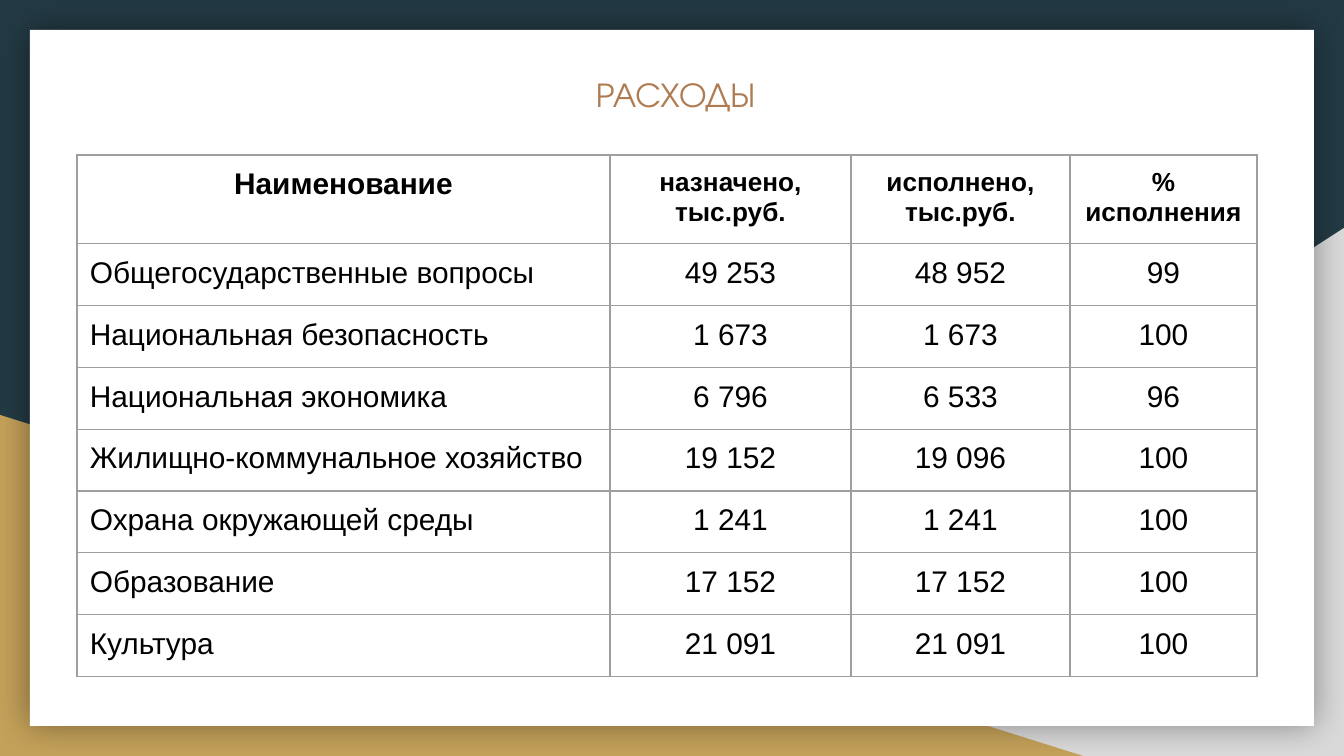
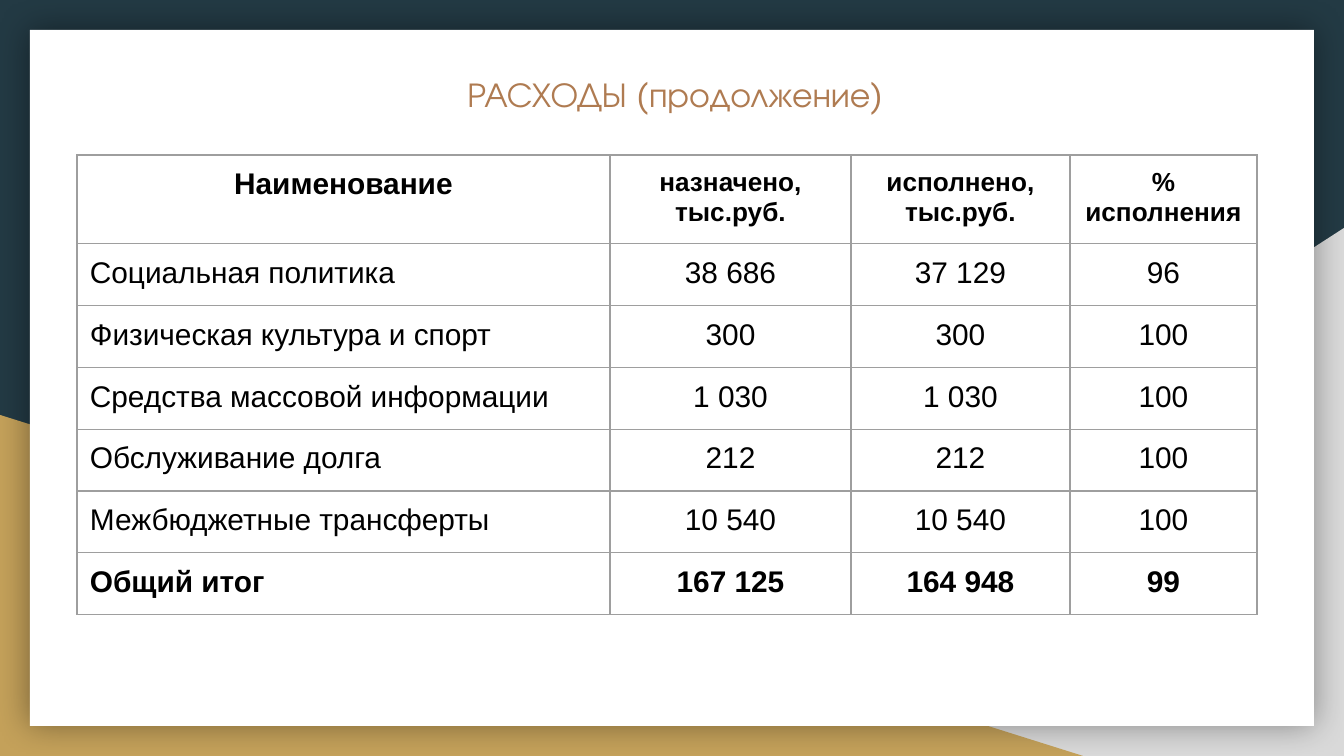
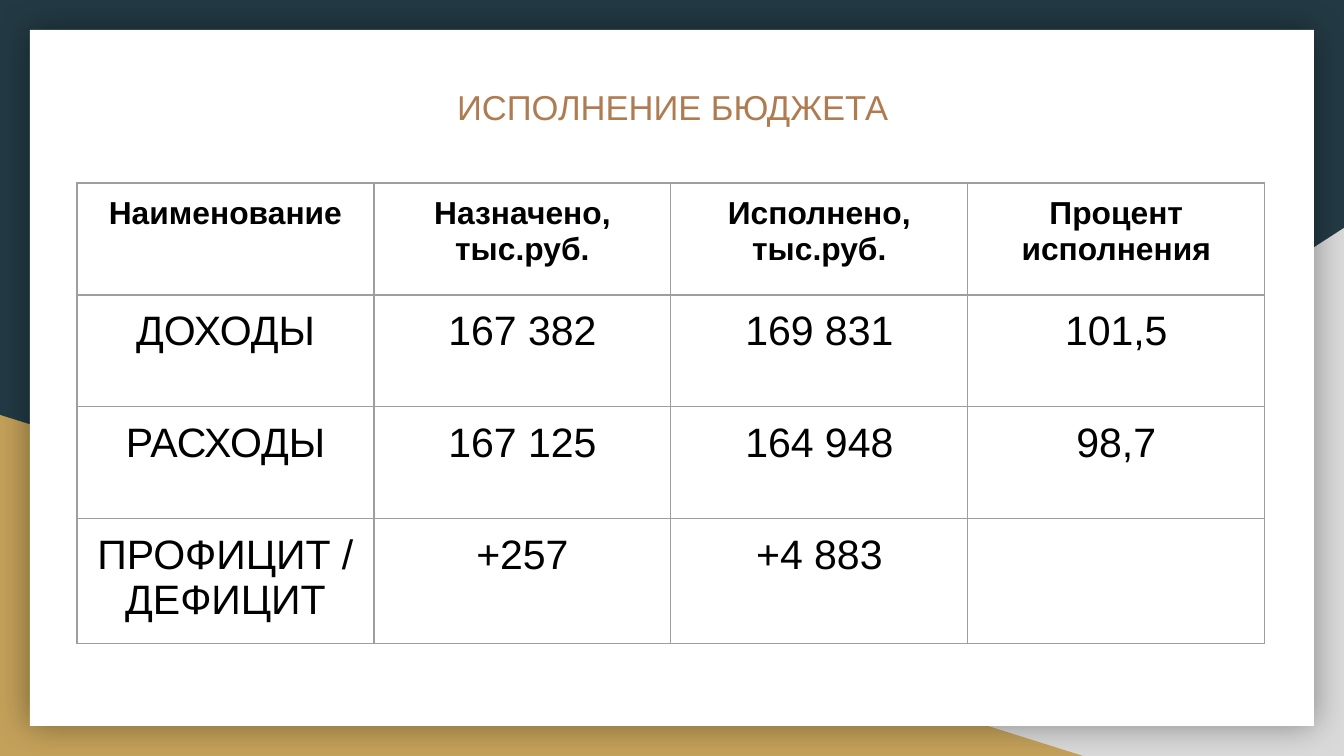
"""Build three budget slides: expenses in two parts and the budget summary."""

from dataclasses import dataclass
from typing import NamedTuple

from pptx import Presentation
from pptx.dml.color import RGBColor
from pptx.enum.shapes import MSO_SHAPE as Preset
from pptx.enum.text import MSO_ANCHOR as Anchor, PP_ALIGN as Align
from pptx.oxml import parse_xml
from pptx.oxml.ns import nsdecls
from pptx.slide import Slide
from pptx.table import _Cell as Cell
from pptx.text.text import _Paragraph as Paragraph
from pptx.util import Emu, Pt

EMU_PER_PX = 914400 / 134.4


@dataclass(frozen=True)
class Theme:
    """Colours, fonts and sizes shared by the slides."""

    navy: str = "233A44"
    silver: str = "D9D9D9"
    gold: str = "C4A15A"
    paper: str = "FFFFFF"
    shadow: str = "000000"
    title: str = "AF7B51"
    ink: str = "000000"
    grid: str = "9E9E9E"
    grid_width: float = 0.75
    body_font: str = "Arial"
    display_font: str = "TeX Gyre Adventor"
    display_size: float = 18.6
    summary_title_size: float = 18.5
    name_size: float = 16
    heading_size: float = 14
    summary_heading_size: float = 17
    summary_size: float = 22


THEME = Theme()


class Box(NamedTuple):
    """A rectangle in px."""

    left: int
    top: int
    width: int
    height: int


class Backdrop(NamedTuple):
    """One filled shape behind the content."""

    preset: Preset
    box: Box
    color: str
    flipped: bool = False
    shadowed: bool = False


class Title(NamedTuple):
    """A slide title with its place and type."""

    text: str
    box: Box
    font: str
    size: float


class TableStyle(NamedTuple):
    """Place, grid and type sizes of one kind of table."""

    left: int
    top: int
    columns: tuple[int, ...]
    heading_height: int
    row_height: int
    heading_sizes: tuple[float, ...]
    body_size: float
    name_align: Align


class Page(NamedTuple):
    """The content of one slide."""

    title: Title
    style: TableStyle
    headings: tuple[str, ...]
    rows: tuple[tuple[str, ...], ...]
    has_total: bool = False


SLIDE = Box(0, 0, 1344, 756)
INSET = 13
SHADOW_BLUR = 34
SHADOW_OPACITY = 40

BACKDROPS = (
    Backdrop(Preset.RIGHT_TRIANGLE, Box(527, 228, 817, 528), THEME.silver, flipped=True),
    Backdrop(Preset.RIGHT_TRIANGLE, Box(0, 415, 1083, 341), THEME.gold),
    Backdrop(Preset.RECTANGLE, Box(30, 30, 1284, 696), THEME.paper, shadowed=True),
)

EXPENSE_TITLE_BOX = Box(121, 60, 1109, 94)
EXPENSE_STYLE = TableStyle(
    77, 155, (533, 241, 219, 187), 85, 60,
    (THEME.name_size,) + (THEME.heading_size,) * 3, THEME.name_size, Align.LEFT,
)
SUMMARY_STYLE = TableStyle(
    77, 183, (297,) * 4, 112, 112,
    (THEME.summary_heading_size,) * 4, THEME.summary_size, Align.CENTER,
)
EXPENSE_HEADINGS = ("Наименование", "назначено, тыс.руб.", "исполнено, тыс.руб.", "% исполнения")

PAGES = (
    Page(
        Title("РАСХОДЫ", EXPENSE_TITLE_BOX, THEME.display_font, THEME.display_size),
        EXPENSE_STYLE,
        EXPENSE_HEADINGS,
        (
            ("Общегосударственные вопросы", "49 253", "48 952", "99"),
            ("Национальная безопасность", "1 673", "1 673", "100"),
            ("Национальная экономика", "6 796", "6 533", "96"),
            ("Жилищно-коммунальное хозяйство", "19 152", "19 096", "100"),
            ("Охрана окружающей среды", "1 241", "1 241", "100"),
            ("Образование", "17 152", "17 152", "100"),
            ("Культура", "21 091", "21 091", "100"),
        ),
    ),
    Page(
        Title("РАСХОДЫ (продолжение)", EXPENSE_TITLE_BOX, THEME.display_font, THEME.display_size),
        EXPENSE_STYLE,
        EXPENSE_HEADINGS,
        (
            ("Социальная политика", "38 686", "37 129", "96"),
            ("Физическая культура и спорт", "300", "300", "100"),
            ("Средства массовой информации", "1 030", "1 030", "100"),
            ("Обслуживание долга", "212", "212", "100"),
            ("Межбюджетные трансферты", "10 540", "10 540", "100"),
            ("Общий итог", "167 125", "164 948", "99"),
        ),
        has_total=True,
    ),
    Page(
        Title("ИСПОЛНЕНИЕ БЮДЖЕТА", Box(121, 73, 1103, 62), THEME.body_font, THEME.summary_title_size),
        SUMMARY_STYLE,
        ("Наименование", "Назначено, тыс.руб.", "Исполнено, тыс.руб.", "Процент исполнения"),
        (
            ("ДОХОДЫ", "167 382", "169 831", "101,5"),
            ("РАСХОДЫ", "167 125", "164 948", "98,7"),
            ("ПРОФИЦИТ / ДЕФИЦИТ", "+257", "+4 883", ""),
        ),
    ),
)


def px(length: int) -> Emu:
    """Turn px into EMU."""
    return Emu(round(length * EMU_PER_PX))


def place(box: Box) -> tuple[Emu, ...]:
    """Turn a px box into EMU arguments."""
    return tuple(px(length) for length in box)


def rgb(color: str) -> RGBColor:
    """Turn a hex string into a colour."""
    return RGBColor.from_string(color)


def style_text(para: Paragraph, font: str, size: float, color: str, align: Align, bold: bool = False) -> None:
    """Set the type of a whole paragraph."""
    para.alignment = align
    para.font.name = font
    para.font.size = Pt(size)
    para.font.bold = bold
    para.font.color.rgb = rgb(color)


def draw_backdrop(slide: Slide, backdrop: Backdrop) -> None:
    """Draw one shape of the shared background."""
    shape = slide.shapes.add_shape(backdrop.preset, *place(backdrop.box))
    shape.shadow.inherit = False
    shape.fill.solid()
    shape.fill.fore_color.rgb = rgb(backdrop.color)
    shape.line.fill.background()
    properties = shape.element.spPr
    if backdrop.flipped:
        properties.get_or_add_xfrm().set("flipH", "1")
    if backdrop.shadowed:
        properties.find("{*}effectLst").append(parse_xml(
            f'<a:outerShdw {nsdecls("a")} blurRad="{px(SHADOW_BLUR)}" dist="0" dir="0" '
            f'algn="ctr" rotWithShape="0"><a:srgbClr val="{THEME.shadow}">'
            f'<a:alpha val="{SHADOW_OPACITY * 1000}"/></a:srgbClr></a:outerShdw>'
        ))


def draw_title(slide: Slide, title: Title) -> None:
    """Draw the centred slide title."""
    frame = slide.shapes.add_textbox(*place(title.box)).text_frame
    frame.word_wrap = True
    frame.vertical_anchor = Anchor.TOP
    frame.margin_left = frame.margin_right = frame.margin_top = frame.margin_bottom = px(INSET)
    para = frame.paragraphs[0]
    para.text = title.text
    style_text(para, title.font, title.size, THEME.title, Align.CENTER)


def outline_cell(cell: Cell) -> None:
    """Clear the cell's fill and draw its four borders."""
    properties = cell._tc.get_or_add_tcPr()
    for side in ("lnL", "lnR", "lnT", "lnB"):
        properties.append(parse_xml(
            f'<a:{side} {nsdecls("a")} w="{Pt(THEME.grid_width)}"><a:solidFill>'
            f'<a:srgbClr val="{THEME.grid}"/></a:solidFill></a:{side}>'
        ))
    cell.fill.background()


def fill_cell(cell: Cell, text: str, size: float, align: Align, bold: bool) -> None:
    """Write and style one table cell."""
    cell.margin_left = cell.margin_right = cell.margin_top = cell.margin_bottom = px(INSET)
    cell.vertical_anchor = Anchor.TOP
    para = cell.text_frame.paragraphs[0]
    para.text = text
    style_text(para, THEME.body_font, size, THEME.ink, align, bold)
    outline_cell(cell)


def draw_table(slide: Slide, page: Page) -> None:
    """Draw the page's table with its heading row."""
    style = page.style
    height = style.heading_height + style.row_height * len(page.rows)
    box = Box(style.left, style.top, sum(style.columns), height)
    table = slide.shapes.add_table(len(page.rows) + 1, len(style.columns), *place(box)).table
    table.first_row = table.horz_banding = False
    for column, width in zip(table.columns, style.columns):
        column.width = px(width)
    for index, row in enumerate(table.rows):
        row.height = px(style.row_height if index else style.heading_height)
    for index, (heading, size) in enumerate(zip(page.headings, style.heading_sizes)):
        fill_cell(table.cell(0, index), heading, size, Align.CENTER, True)
    for row_index, values in enumerate(page.rows, start=1):
        bold = page.has_total and row_index == len(page.rows)
        for index, value in enumerate(values):
            align = Align.CENTER if index else style.name_align
            fill_cell(table.cell(row_index, index), value, style.body_size, align, bold)


def main() -> None:
    """Build and save the deck."""
    deck = Presentation()
    deck.slide_width, deck.slide_height = px(SLIDE.width), px(SLIDE.height)
    for page in PAGES:
        slide = deck.slides.add_slide(deck.slide_layouts[6])
        slide.background.fill.solid()
        slide.background.fill.fore_color.rgb = rgb(THEME.navy)
        for backdrop in BACKDROPS:
            draw_backdrop(slide, backdrop)
        draw_title(slide, page.title)
        draw_table(slide, page)
    deck.save("out.pptx")


if __name__ == "__main__":
    main()
